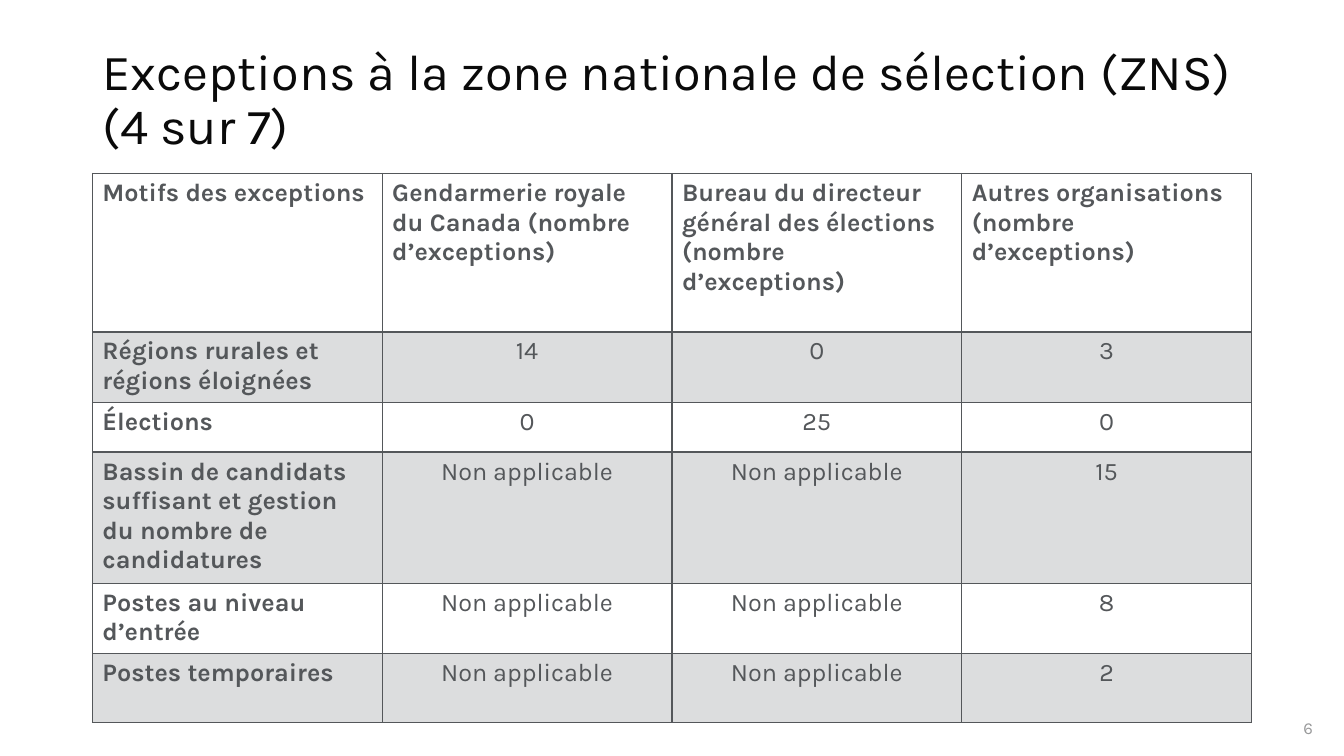
from lxml.etree import SubElement
from pptx import Presentation
from pptx.dml.color import RGBColor
from pptx.enum.text import MSO_ANCHOR, PP_ALIGN
from pptx.oxml.ns import qn
from pptx.util import Pt

FONT = "Karla"
COLORS = {"title": "0A0A0A", "grey": "54575A", "number": "999A9B"}
NA = "Non applicable"
COUNT = "(nombre d’exceptions)"
HEADER = [
    ["Motifs des exceptions"],
    [f"Gendarmerie royale du Canada {COUNT}"],
    ["Bureau du directeur général des élections", COUNT],
    ["Autres organisations", COUNT],
]
REASONS = [
    ("Régions rurales et régions éloignées", "14", "0", "3"),
    ("Élections", "0", "25", "0"),
    ("Bassin de candidats suffisant et gestion du nombre de candidatures", NA, NA, "15"),
    ("Postes au niveau d’entrée", NA, NA, "8"),
    ("Postes temporaires", NA, NA, "2"),
]
ROW_HEIGHTS = [113, 49.5, 35.5, 92, 49.25, 49.25]
COL_WIDTH = 207


def add_run(p, text, size, color, bold=False):
    r = p.add_run()
    r.text = text
    r.font.name = FONT
    r.font.size = Pt(size)
    r.font.bold = bold
    r.font.color.rgb = RGBColor.from_string(COLORS[color])


def add_text(s, box, lines, size, color, align=PP_ALIGN.LEFT, spacing=1.0):
    tf = s.shapes.add_textbox(*map(Pt, box)).text_frame
    tf.word_wrap = True
    tf.vertical_anchor = MSO_ANCHOR.MIDDLE
    p = tf.paragraphs[0]
    p.alignment = align
    p.line_spacing = spacing
    for i, line in enumerate(lines):
        if i:
            p.add_line_break()
        add_run(p, line, size, color)


def set_borders(cell, top, bottom):
    tc_pr = cell._tc.get_or_add_tcPr()
    for side, width in (("L", 1), ("R", 1), ("T", top), ("B", bottom)):
        ln = SubElement(tc_pr, qn(f"a:ln{side}"), w=str(Pt(width)))
        fill = SubElement(ln, qn("a:solidFill"))
        SubElement(fill, qn("a:srgbClr"), val=COLORS["grey"])


def set_fill(cell, shaded):
    if not shaded:
        cell.fill.background()
        return
    cell.fill.solid()
    cell.fill.fore_color.rgb = RGBColor.from_string(COLORS["grey"])
    color = cell._tc.tcPr.find(qn("a:solidFill")).find(qn("a:srgbClr"))
    SubElement(color, qn("a:alpha"), val="20000")


def fill_cell(cell, paragraphs, bold, align):
    tf = cell.text_frame
    for i, text in enumerate(paragraphs):
        p = tf.add_paragraph() if i else tf.paragraphs[0]
        p.alignment = align
        add_run(p, text, 18, "grey", bold)


def add_exceptions_table(s, left, top):
    rows = [HEADER] + [[[text] for text in reason] for reason in REASONS]
    n_cols = len(HEADER)
    frame = s.shapes.add_table(len(rows), n_cols, Pt(left), Pt(top),
                               Pt(COL_WIDTH * n_cols), Pt(sum(ROW_HEIGHTS)))
    table = frame.table
    table.horz_banding = False
    for column in table.columns:
        column.width = Pt(COL_WIDTH)
    for i, row in enumerate(rows):
        table.rows[i].height = Pt(ROW_HEIGHTS[i])
        for j, paragraphs in enumerate(row):
            cell = table.cell(i, j)
            heading = i == 0 or j == 0
            set_borders(cell, 2 if i == 1 else 1, 2 if i == 0 else 1)
            set_fill(cell, i % 2 == 1)
            fill_cell(cell, paragraphs, heading,
                      PP_ALIGN.LEFT if heading else PP_ALIGN.CENTER)


def main():
    prs = Presentation()
    prs.slide_width, prs.slide_height = Pt(960), Pt(540)
    s = prs.slides.add_slide(prs.slide_layouts[6])
    add_text(s, (66, 28.75, 879, 87),
             ["Exceptions à la zone nationale de sélection (ZNS)", "(4 sur 7)"],
             36, "title", spacing=0.9)
    add_exceptions_table(s, 66, 124)
    add_text(s, (850.5, 505.5, 94.5, 28.75), ["6"], 12, "number", PP_ALIGN.RIGHT)
    prs.save("out.pptx")


if __name__ == "__main__":
    main()
